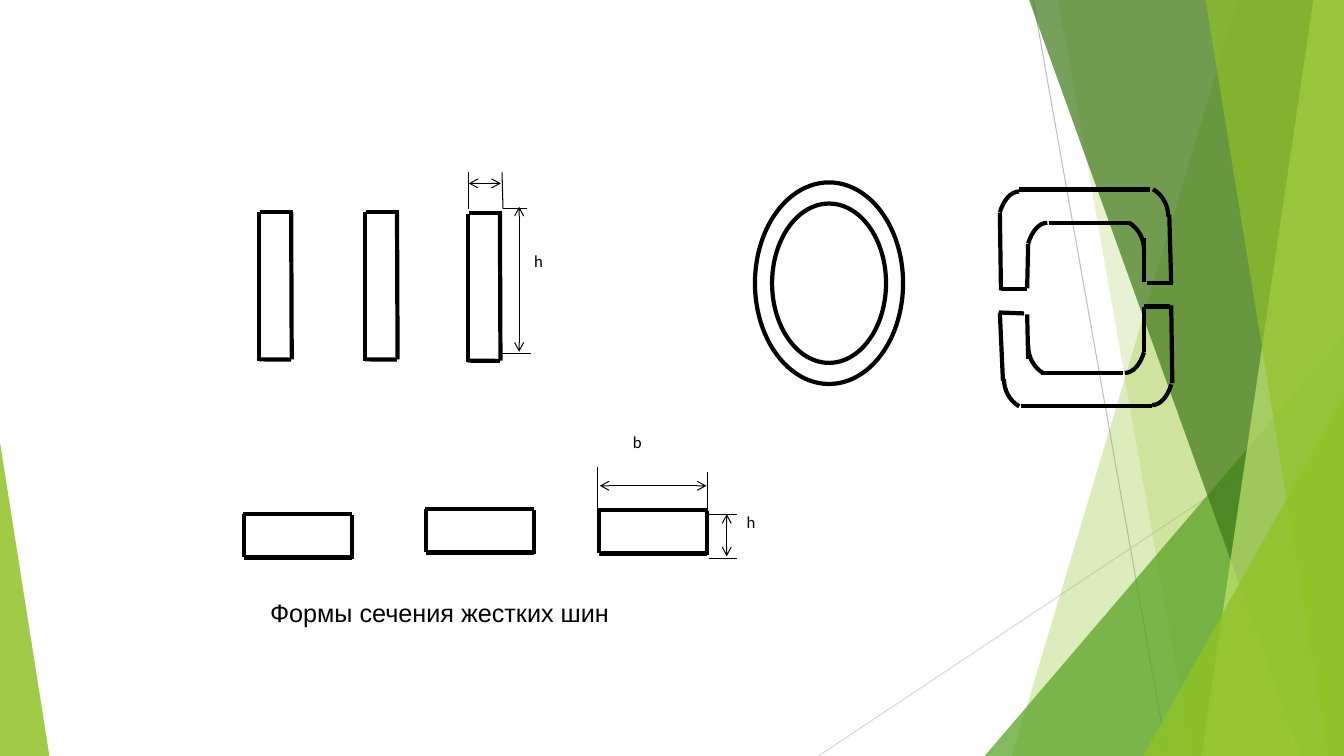
from lxml import etree
from pptx import Presentation
from pptx.dml.color import RGBColor
from pptx.enum.shapes import MSO_CONNECTOR, MSO_SHAPE
from pptx.enum.text import MSO_ANCHOR, PP_ALIGN
from pptx.oxml.ns import qn
from pptx.util import Pt

LINE = MSO_CONNECTOR.STRAIGHT
ARC, OVAL, RECT, TRIANGLE = MSO_SHAPE.ARC, MSO_SHAPE.OVAL, MSO_SHAPE.RECTANGLE, MSO_SHAPE.ISOSCELES_TRIANGLE
LEFT, TOP = PP_ALIGN.LEFT, MSO_ANCHOR.TOP
WIDTH, HEIGHT = 960, 540

FACETS = [
    (884.2, 722.9, "90C226", 30),
    (756, 851, "90C226", 20),
    (735.1, 929.5, "3F7819", 70),
    (938.2, 858.2, "C0E474", 70),
    (861.1, 949, "90C226", 65),
]
UPRIGHT_BARS = [(185, 151.7), (260.6, 151.7), (334.1, 152.6)]
UPRIGHT_SIDES = [(0, 0, 0, 106), (0, 105, 23, 105.2), (0.7, -0.3, 24.2, -0.3), (23, 0, 23.4, 105)]
FLAT_BARS = [(174.2, 367.2), (304.4, 363.6), (427.7, 364.3)]
FLAT_SIDES = [(77.3, 0, -0.7, 0), (0, 0, 0, 31), (77.3, 1, 77.3, 32.2), (77.3, 31, 0, 31)]
TUBE = [(539.3, 130.3, 105.8, 144), (551.5, 145.4, 81.4, 113.8)]
CHANNEL_SIDES = [
    (715, 207.4, 714.2, 151.9), (727.9, 135.4, 821.5, 135.4),
    (836.6, 202.3, 835.2, 153.4), (819.4, 202.3, 838.1, 202.3),
    (715, 206.6, 733.7, 206.6), (733.7, 205.9, 734.4, 174.2),
    (817.2, 201.6, 817.2, 169.9), (749.5, 159.1, 807.1, 159.1),
    (836.6, 218.2, 837.4, 273.6), (823, 290.2, 729.4, 290.2),
    (714.2, 223.2, 716.4, 272.2), (731.5, 223.9, 713.5, 223.2),
    (835.9, 218.9, 817.2, 218.9), (817.2, 219.6, 817.2, 251.3),
    (733.7, 224.6, 734.4, 256.3), (802.1, 266.4, 743.8, 266.4),
]
TALL, WIDE = (15.8, 29.5), (20.9, 22.3)
CHANNEL_CORNERS = [
    (727.9, 166.3, TALL, 227, 270), (748.1, 188.6, TALL, 227, 270),
    (823, 259.9, TALL, 47, 90), (803.5, 236.9, TALL, 47, 90),
    (813.6, 154.8, WIDE, 297, 360), (796.3, 178.6, WIDE, 297, 360),
    (738, 270.7, WIDE, 117, 180), (755.3, 247, WIDE, 117, 180),
]
EXTENSIONS = [
    (334.8, 149, 334.8, 123.1), (359.3, 149, 358.6, 123.1),
    (359.3, 149, 376.6, 149), (357.8, 252.7, 379.4, 252.7),
    (504.7, 367.2, 531.4, 367.2), (506.2, 398.9, 533.5, 398.9),
    (427, 364.3, 427, 333.4), (505.4, 368.6, 505.4, 337),
]
DIMENSIONS = [
    (334.8, 131, 357.8, 131), (370.8, 147.6, 370.8, 251.3),
    (428.4, 347, 504.7, 347), (519.1, 367.2, 519.1, 397.4),
]
LABELS = [("b", 445, 302.4, 48.2, 39.6), ("h", 374.4, 173.5, 31, 51.8), ("h", 526.3, 360, 31, 51.8)]


def rgb(value):
    return RGBColor.from_string(value)


class Drawing:
    """Draws styled elements on one slide, with lengths in points."""

    def __init__(self, s):
        self.shapes = s.shapes
        self.ink = "000000"
        self.paper = "FFFFFF"
        self.bold = 3
        self.thin = 0.75

    def line(self, x1, y1, x2, y2, width, color=None, arrows=False):
        c = self.shapes.add_connector(LINE, Pt(x1), Pt(y1), Pt(x2), Pt(y2))
        c.line.width = Pt(width)
        c.line.color.rgb = rgb(color or self.ink)
        spPr = c._element.spPr
        etree.SubElement(spPr, qn("a:effectLst"))
        if arrows:
            for end in ("a:headEnd", "a:tailEnd"):
                etree.SubElement(spPr.find(qn("a:ln")), qn(end), type="arrow")

    def fill(self, sp, color, alpha=100):
        sp.shadow.inherit = False
        sp.fill.solid()
        sp.fill.fore_color.rgb = rgb(color)
        sp.line.fill.background()
        if alpha < 100:
            clr = sp._element.spPr.find(qn("a:solidFill"))[0]
            etree.SubElement(clr, qn("a:alpha"), val=str(alpha * 1000))

    def outline(self, sp):
        sp.line.width = Pt(self.bold)
        sp.line.color.rgb = rgb(self.ink)

    def shape(self, kind, x, y, w, h):
        return self.shapes.add_shape(kind, Pt(x), Pt(y), Pt(w), Pt(h))

    def facet(self, top_x, bottom_x, color, alpha):
        fb = self.shapes.build_freeform(Pt(top_x), 0)
        fb.add_line_segments([(Pt(WIDTH), 0), (Pt(WIDTH), Pt(HEIGHT)), (Pt(bottom_x), Pt(HEIGHT))])
        self.fill(fb.convert_to_shape(), color, alpha)

    def triangle(self, x, y, w, apex, color, alpha):
        sp = self.shape(TRIANGLE, x, y, w, HEIGHT - y)
        sp.adjustments[0] = apex
        self.fill(sp, color, alpha)

    def oval(self, x, y, w, h):
        sp = self.shape(OVAL, x, y, w, h)
        self.fill(sp, self.paper)
        self.outline(sp)

    def arc(self, cx, cy, radii, start, end):
        rx, ry = radii
        sp = self.shape(ARC, cx - rx, cy - ry, 2 * rx, 2 * ry)
        sp.adjustments[0] = start * 0.6
        sp.adjustments[1] = end % 360 * 0.6
        sp.shadow.inherit = False
        sp.fill.background()
        self.outline(sp)

    def text(self, sp, words, font, size):
        tf = sp.text_frame
        tf.word_wrap = True
        tf.vertical_anchor = TOP
        tf.text = words
        p = tf.paragraphs[0]
        p.alignment = LEFT
        r = p.runs[0]
        r.font.name = font
        r.font.size = Pt(size)
        r.font.color.rgb = rgb(self.ink)
        return p

    def label(self, words, x, y, w, h):
        sp = self.shape(RECT, x, y, w, h)
        self.fill(sp, self.paper)
        p = self.text(sp, words, "Calibri", 12)
        p.line_spacing = 1.15
        p.space_after = Pt(10)

    def caption(self, words, x, y, w, h):
        self.text(self.shapes.add_textbox(Pt(x), Pt(y), Pt(w), Pt(h)), words, "Arial", 18)


def main():
    prs = Presentation()
    prs.slide_width, prs.slide_height = Pt(WIDTH), Pt(HEIGHT)
    d = Drawing(prs.slides.add_slide(prs.slide_layouts[6]))

    d.line(738, 0, 833.8, HEIGHT, d.thin, "BFBFBF")
    d.line(WIDTH, 290.2, 584.6, HEIGHT, d.thin, "D9D9D9")
    for facet in FACETS[:2]:
        d.facet(*facet)
    d.triangle(703.4, 239.8, 256.6, 1, "54A021", 72)
    for facet in FACETS[2:]:
        d.facet(*facet)
    d.triangle(816.5, 283, 143.5, 1, "90C226", 80)
    d.triangle(0, 316.1, 35.3, 0, "90C226", 85)

    for bars, sides in ((UPRIGHT_BARS, UPRIGHT_SIDES), (FLAT_BARS, FLAT_SIDES)):
        for x, y in bars:
            for x1, y1, x2, y2 in sides:
                d.line(x + x1, y + y1, x + x2, y + y2, d.bold)
    for ring in TUBE:
        d.oval(*ring)
    for side in CHANNEL_SIDES:
        d.line(*side, d.bold)
    for corner in CHANNEL_CORNERS:
        d.arc(*corner)
    for extension in EXTENSIONS:
        d.line(*extension, d.thin)
    for dimension in DIMENSIONS:
        d.line(*dimension, d.thin, arrows=True)
    for label in LABELS:
        d.label(*label)
    d.caption("Формы сечения жестких шин", 185.8, 423.4, 271.4, 28.8)

    prs.save("out.pptx")


if __name__ == "__main__":
    main()
